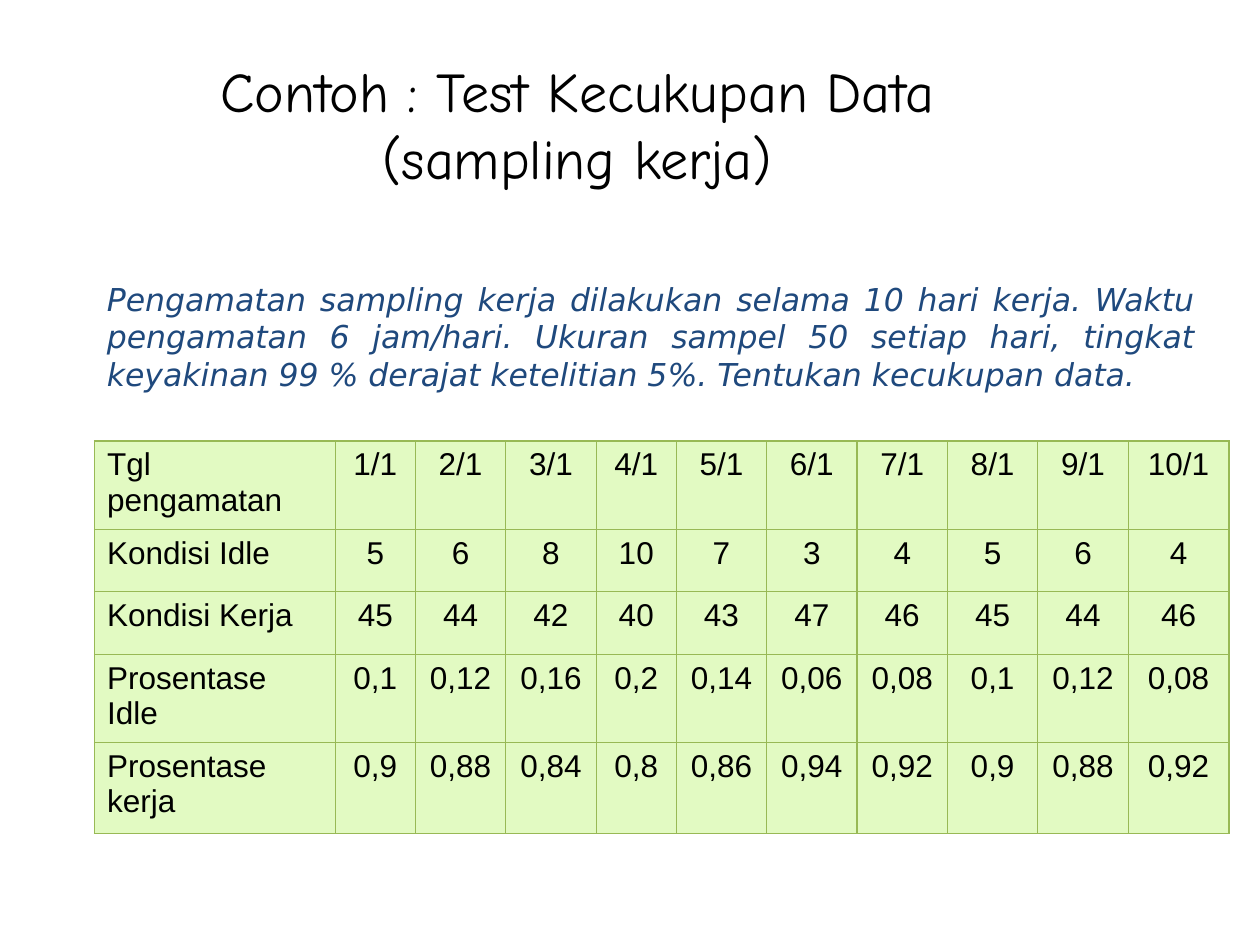
from dataclasses import dataclass

from lxml import etree
from pptx import Presentation
from pptx.dml.color import RGBColor
from pptx.enum import text as t
from pptx.oxml import ns
from pptx.util import Pt


@dataclass(frozen=True)
class Font:
    face: str
    size: float
    color: str
    slant: bool = False


class Theme:
    title = Font("Comic Neue", 32, "000000")
    task = Font("DejaVu Sans", 18, "1F497D", True)
    cell = Font("Arial", 18, "000000")
    fill = "E2FAC2"
    line = "98B955"
    edge = 0.75


class Deck:
    """Holds the theme and the slide being built."""

    def __init__(self, theme, wide, high):
        self.theme = theme
        self.file = Presentation()
        self.file.slide_width, self.file.slide_height = Pt(wide), Pt(high)
        self.slide = self.file.slides.add_slide(self.file.slide_layouts[5])

    def add_run(self, frame, words, font, align):
        para = frame.paragraphs[0]
        para.alignment = align
        run = para.add_run()
        run.text = words
        run.font.name = font.face
        run.font.size = Pt(font.size)
        run.font.italic = font.slant
        run.font.color.rgb = RGBColor.from_string(font.color)

    def title(self, words, left, top, wide, high):
        shape = self.slide.shapes.title
        shape.left, shape.top = Pt(left), Pt(top)
        shape.width, shape.height = Pt(wide), Pt(high)
        frame = shape.text_frame
        frame.auto_size = t.MSO_AUTO_SIZE.NONE
        frame.vertical_anchor = t.MSO_ANCHOR.MIDDLE
        self.add_run(frame, words, self.theme.title, t.PP_ALIGN.CENTER)

    def task(self, words, left, top, wide, high):
        box = self.slide.shapes.add_textbox(Pt(left), Pt(top), Pt(wide), Pt(high))
        frame = box.text_frame
        frame.word_wrap = True
        frame.auto_size = t.MSO_AUTO_SIZE.SHAPE_TO_FIT_TEXT
        frame.vertical_anchor = t.MSO_ANCHOR.MIDDLE
        self.add_run(frame, words, self.theme.task, t.PP_ALIGN.JUSTIFY)

    def border(self, cell):
        props = cell._tc.get_or_add_tcPr()
        for at, side in enumerate(("lnL", "lnR", "lnT", "lnB")):
            line = etree.Element(ns.qn(f"a:{side}"), w=str(Pt(self.theme.edge)))
            fill = etree.SubElement(line, ns.qn("a:solidFill"))
            etree.SubElement(fill, ns.qn("a:srgbClr"), val=self.theme.line)
            props.insert(at, line)

    def table(self, rows, left, top, wides, highs):
        frame = self.slide.shapes.add_table(
            len(rows), len(wides), Pt(left), Pt(top), Pt(sum(wides)), Pt(sum(highs)))
        grid = frame.table
        grid.first_row = grid.horz_banding = False
        for col, wide in zip(grid.columns, wides):
            col.width = Pt(wide)
        for row, high, words in zip(grid.rows, highs, rows):
            row.height = Pt(high)
            for at, (cell, word) in enumerate(zip(row.cells, words)):
                cell.fill.solid()
                cell.fill.fore_color.rgb = RGBColor.from_string(self.theme.fill)
                self.border(cell)
                align = t.PP_ALIGN.CENTER if at else t.PP_ALIGN.LEFT
                self.add_run(cell.text_frame, word, self.theme.cell, align)


def share(counts, size):
    """Each count as a part of the sample, with a decimal comma."""
    return [f"{count / size:g}".replace(".", ",") for count in counts]


def main():
    size = 50
    idle = [5, 6, 8, 10, 7, 3, 4, 5, 6, 4]
    work = [size - count for count in idle]
    rows = [
        ["Tgl pengamatan", *(f"{day}/1" for day in range(1, 11))],
        ["Kondisi Idle", *map(str, idle)],
        ["Kondisi Kerja", *map(str, work)],
        ["Prosentase Idle", *share(idle, size)],
        ["Prosentase kerja", *share(work, size)],
    ]
    slim, mid = 45.8, 51.65
    wides = [137.6, slim, mid, mid, slim, *[mid] * 5, 57.6]

    deck = Deck(Theme(), 720, 540)
    deck.title("Contoh : Test Kecukupan Data (sampling kerja)", 54, 18, 552, 105)
    deck.task(
        "Pengamatan sampling kerja dilakukan selama 10 hari kerja. "
        "Waktu pengamatan 6 jam/hari. Ukuran sampel 50 setiap hari, "
        "tingkat keyakinan 99 % derajat ketelitian 5%. "
        "Tentukan kecukupan data.", 54, 155.8, 636, 72.7)
    deck.table(rows, 54, 252, wides, [42.5, 35.7, 35.7, 35.7, 52])
    deck.file.save("out.pptx")


if __name__ == "__main__":
    main()
